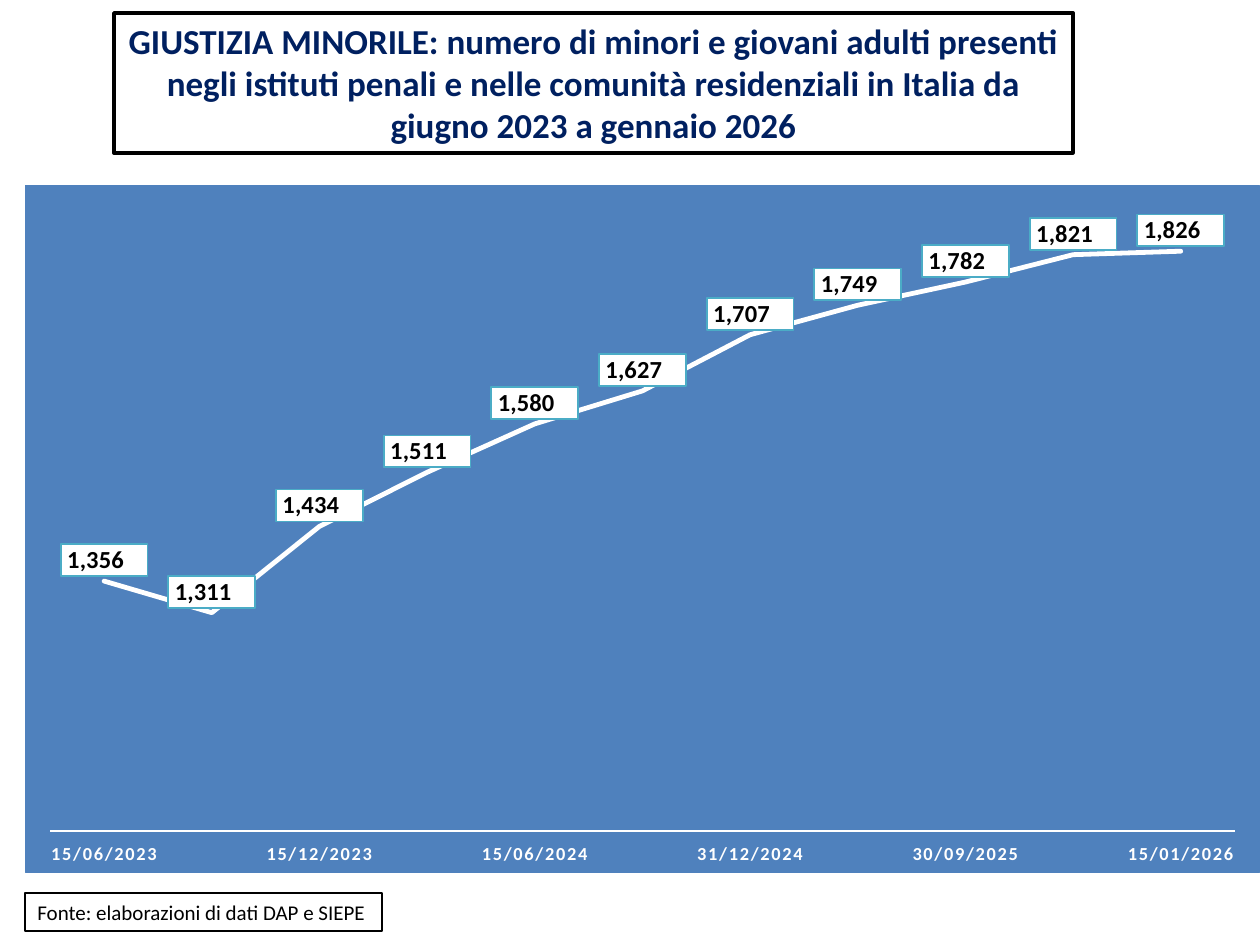
from lxml.etree import fromstring
from pptx import Presentation
from pptx.chart.data import CategoryChartData
from pptx.dml.color import RGBColor
from pptx.enum.chart import XL_CHART_TYPE as ChartType
from pptx.enum.chart import XL_LABEL_POSITION as LabelPosition
from pptx.enum.chart import XL_MARKER_STYLE as MarkerStyle
from pptx.enum.chart import XL_TICK_LABEL_POSITION as TickLabels
from pptx.enum.chart import XL_TICK_MARK as TickMark
from pptx.enum.shapes import MSO_SHAPE as Shape
from pptx.enum.text import MSO_ANCHOR as Anchor
from pptx.enum.text import MSO_AUTO_SIZE as AutoSize
from pptx.enum.text import PP_ALIGN as Align
from pptx.oxml.ns import qn
from pptx.util import Pt

EMU_PER_PX = 914400 / 126
FONT = "Calibri"
BLUE = "4F81BD"
WHITE = "FFFFFF"
BLACK = "000000"
NUMBER_FORMAT = r'_-* #,##0\ _€_-;\-* #,##0\ _€_-;_-* "-"?'
NAMESPACES = ('xmlns:c="http://schemas.openxmlformats.org/drawingml/2006/chart" '
              'xmlns:a="http://schemas.openxmlformats.org/drawingml/2006/main"')

DATES = ["15/06/2023", "", "15/12/2023", "", "15/06/2024", "",
         "31/12/2024", "", "30/09/2025", "", "15/01/2026"]
PRESENT = [1356, 1311, 1434, 1511, 1580, 1627, 1707, 1749, 1782, 1821, 1826]


def px(length):
    return round(length * EMU_PER_PX)


def rgb(value):
    return RGBColor.from_string(value)


def style_font(font, size, color, bold=False):
    font.name = FONT
    font.size = Pt(size)
    font.bold = bold
    font.color.rgb = rgb(color)


def style_line(line, color, width):
    line.color.rgb = rgb(color)
    line.width = Pt(width)


def frame_text(shape, text, line_width, size, color, bold, align):
    """Write text in a white box with a black outline."""
    shape.fill.solid()
    shape.fill.fore_color.rgb = rgb(WHITE)
    style_line(shape.line, BLACK, line_width)
    frame = shape.text_frame
    frame.text = text
    para = frame.paragraphs[0]
    para.alignment = align
    style_font(para.font, size, color, bold)
    return frame


def chart_box_format(fill, line, width):
    """Shape properties for chart parts that have no format object."""
    return fromstring(
        f'<c:spPr {NAMESPACES}><a:solidFill><a:srgbClr val="{fill}"/></a:solidFill>'
        f'<a:ln w="{Pt(width)}"><a:solidFill><a:srgbClr val="{line}"/></a:solidFill>'
        '</a:ln></c:spPr>')


def set_plot_layout(chart, x, y, width, height):
    plot_area = chart._chartSpace.chart.plotArea
    for old in plot_area.findall(qn("c:layout")):
        plot_area.remove(old)
    plot_area.insert(0, fromstring(
        f'<c:layout {NAMESPACES}><c:manualLayout><c:layoutTarget val="inner"/>'
        '<c:xMode val="edge"/><c:yMode val="edge"/>'
        f'<c:x val="{x}"/><c:y val="{y}"/><c:w val="{width}"/><c:h val="{height}"/>'
        '</c:manualLayout></c:layout>'))


def add_title(page, left, top, width, height):
    title = page.shapes.title
    title.left, title.top, title.width, title.height = map(px, (left, top, width, height))
    frame = frame_text(
        title, "GIUSTIZIA MINORILE: numero di minori e giovani adulti presenti "
        "negli istituti penali e nelle comunità residenziali in Italia da "
        "giugno 2023 a gennaio 2026", 2, 20, "002060", True, Align.CENTER)
    frame.word_wrap = True
    frame.auto_size = AutoSize.NONE
    frame.vertical_anchor = Anchor.MIDDLE


def add_trend_chart(page, left, top, width, height):
    data = CategoryChartData()
    data.categories = DATES
    data.add_series("Series 1", PRESENT)
    chart = page.shapes.add_chart(
        ChartType.LINE_STACKED, *map(px, (left, top, width, height)), data).chart
    chart.has_legend = False
    chart.has_title = False
    style_font(chart.font, 10, BLACK)
    chart._chartSpace.chart.addnext(chart_box_format(BLUE, BLUE, 0.75))
    set_plot_layout(chart, 0.02, 0.02, 0.96, 0.92)

    # Axes
    values = chart.value_axis
    values.minimum_scale = 1000
    values.has_major_gridlines = False
    values.visible = False
    values.tick_labels.number_format = NUMBER_FORMAT
    values.tick_labels.number_format_is_linked = False
    dates = chart.category_axis
    dates.major_tick_mark = dates.minor_tick_mark = TickMark.NONE
    dates.tick_label_position = TickLabels.LOW
    style_line(dates.format.line, WHITE, 1)
    font = dates.tick_labels.font
    style_font(font, 10.5, WHITE, True)
    font._element.set("spc", "100")
    # Automatic rotation keeps each date on one line
    dates._element.txPr.bodyPr.set("rot", "-60000000")
    dates._element.txPr.bodyPr.set("vert", "horz")

    # Line and its boxed labels
    series = chart.plots[0].series[0]
    series.smooth = False
    series.marker.style = MarkerStyle.NONE
    style_line(series.format.line, WHITE, 2.75)
    outline = series.format.line._ln
    outline.set("cap", "rnd")
    outline.append(fromstring(f"<a:round {NAMESPACES}/>"))
    labels = series.data_labels
    labels.show_value = True
    labels.number_format = NUMBER_FORMAT
    labels.number_format_is_linked = False
    labels.position = LabelPosition.ABOVE
    style_font(labels.font, 14, BLACK, True)
    text_format = labels._element.find(qn("c:txPr"))
    text_format.addprevious(chart_box_format(WHITE, "4BACC6", 1))


def add_source_note(page, left, top, width, height):
    note = page.shapes.add_shape(Shape.RECTANGLE, *map(px, (left, top, width, height)))
    note.shadow.inherit = False
    frame = frame_text(note, "Fonte: elaborazioni di dati DAP e SIEPE",
                       0.75, 12, BLACK, False, Align.LEFT)
    frame.word_wrap = False
    frame.vertical_anchor = Anchor.TOP


def main():
    deck = Presentation()
    deck.slide_width, deck.slide_height = px(1260), px(945)
    page = deck.slides.add_slide(deck.slide_layouts[5])
    add_title(page, 114, 13, 959, 140)
    add_trend_chart(page, 25, 185, 1235, 688)
    add_source_note(page, 25, 893, 357, 38)
    deck.save("out.pptx")


if __name__ == "__main__":
    main()
